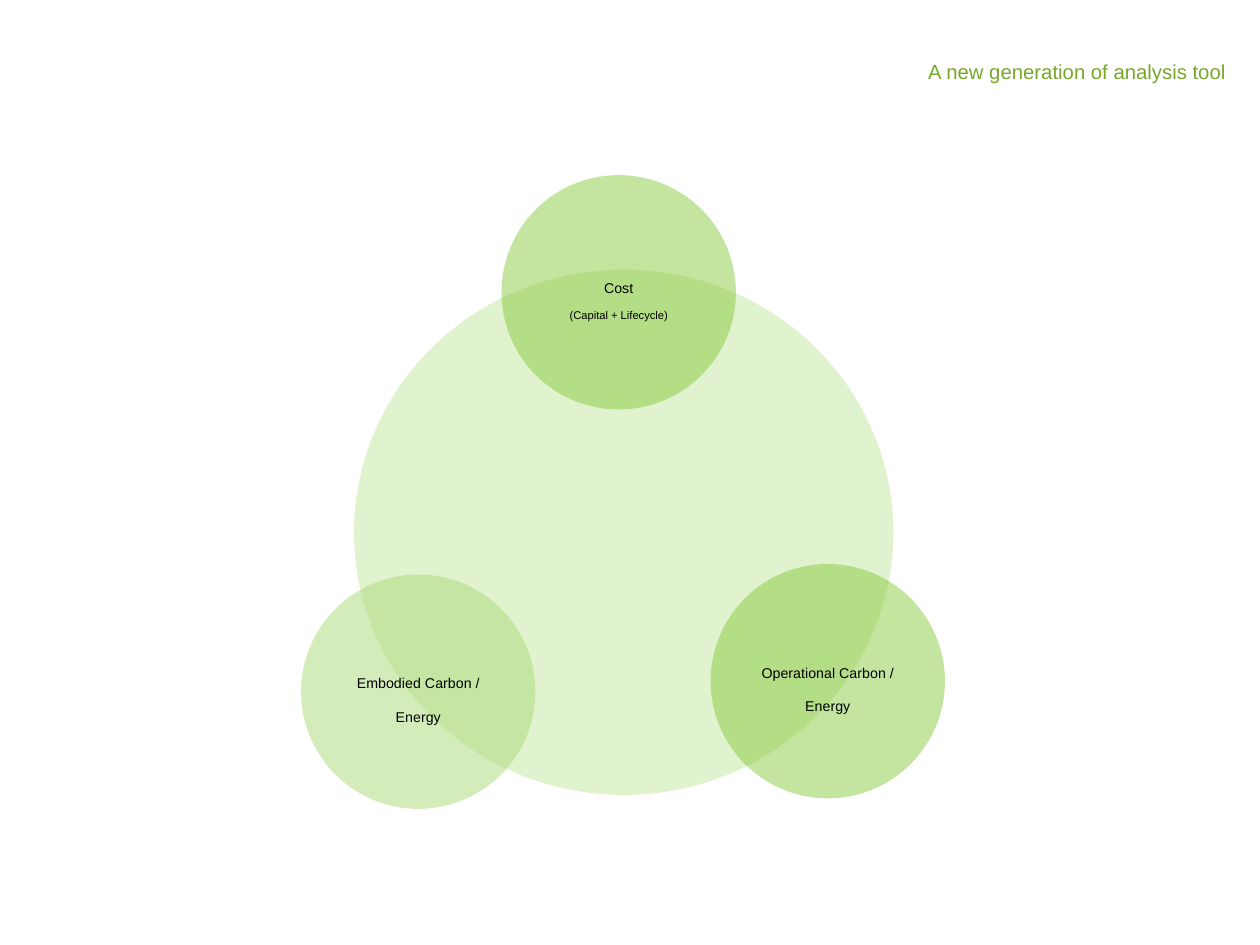
from lxml import etree
from pptx import Presentation
from pptx.dml.color import RGBColor
from pptx.enum.shapes import MSO_SHAPE
from pptx.enum.text import MSO_ANCHOR, MSO_AUTO_SIZE, PP_ALIGN
from pptx.oxml.ns import qn
from pptx.util import Pt

ELLIPSE = MSO_SHAPE.OVAL
TOP, MIDDLE = MSO_ANCHOR.TOP, MSO_ANCHOR.MIDDLE
CENTER, RIGHT = PP_ALIGN.CENTER, PP_ALIGN.RIGHT
NO_AUTOFIT = MSO_AUTO_SIZE.NONE

BLACK = RGBColor(0x00, 0x00, 0x00)
TITLE_GREEN = RGBColor(0x78, 0xA7, 0x2A)
PALE_GREEN = RGBColor(0xE1, 0xF2, 0xCE)
SOFT_GREEN = RGBColor(0xAB, 0xDB, 0x77)
BRIGHT_GREEN = RGBColor(0x89, 0xCC, 0x40)

TITLE_ONLY = 5
DIAMETER = 133.9


class DiagramSlide:
    """Style and current slide of the circle diagram."""

    font_name = "Arial"
    subscript = "-25000"

    def __init__(self, presentation):
        self.slide = presentation.slides.add_slide(
            presentation.slide_layouts[TITLE_ONLY])

    def add_lines(self, shape, lines, color, alignment, anchor):
        """Fill a shape with (text, size) lines set as subscript."""
        frame = shape.text_frame
        frame_format = {"word_wrap": True, "auto_size": NO_AUTOFIT,
                        "vertical_anchor": anchor}
        for name, value in frame_format.items():
            setattr(frame, name, value)
        for index, (text, size) in enumerate(lines):
            paragraph = frame.add_paragraph() if index else frame.paragraphs[0]
            paragraph.alignment = alignment
            run = paragraph.add_run()
            run.text = text
            font_format = {"name": self.font_name, "size": Pt(size)}
            for name, value in font_format.items():
                setattr(run.font, name, value)
            run.font.color.rgb = color
            run._r.get_or_add_rPr().set("baseline", self.subscript)

    def title(self, text, left, top, width, height, size):
        shape = self.slide.shapes.title
        place = {"left": left, "top": top, "width": width, "height": height}
        for name, value in place.items():
            setattr(shape, name, Pt(value))
        self.add_lines(shape, [(text, size)], TITLE_GREEN, RIGHT, TOP)

    def circle(self, left, top, width, height, color, opacity=100, lines=()):
        shape = self.slide.shapes.add_shape(
            ELLIPSE, Pt(left), Pt(top), Pt(width), Pt(height))
        shape.shadow.inherit = False
        shape.line.fill.background()
        shape.fill.solid()
        shape.fill.fore_color.rgb = color
        if opacity < 100:
            rgb = shape._element.spPr.find(qn("a:solidFill")).find(qn("a:srgbClr"))
            etree.SubElement(rgb, qn("a:alpha")).set("val", str(opacity * 1000))
        if lines:
            self.add_lines(shape, lines, BLACK, CENTER, MIDDLE)


def main():
    presentation = Presentation()
    presentation.slide_width, presentation.slide_height = Pt(720), Pt(540)
    diagram = DiagramSlide(presentation)

    # Title
    diagram.title("A new generation of analysis tool", 378, 16.6, 329.8, 37.4, 20)

    # Large background circle
    diagram.circle(202.3, 154.1, 308.2, 300.2, PALE_GREEN)

    # Three translucent topic circles
    topics = [
        (172.1, 328.3, SOFT_GREEN, [("Embodied Carbon / Energy", 14)]),
        (286.6, 100.1, BRIGHT_GREEN, [("Cost", 14), ("(Capital + Lifecycle)", 11)]),
        (406.1, 322.3, BRIGHT_GREEN, [("Operational Carbon / Energy", 14)]),
    ]
    for left, top, color, lines in topics:
        diagram.circle(left, top, DIAMETER, DIAMETER, color, 50, lines)

    presentation.save("out.pptx")


if __name__ == "__main__":
    main()
